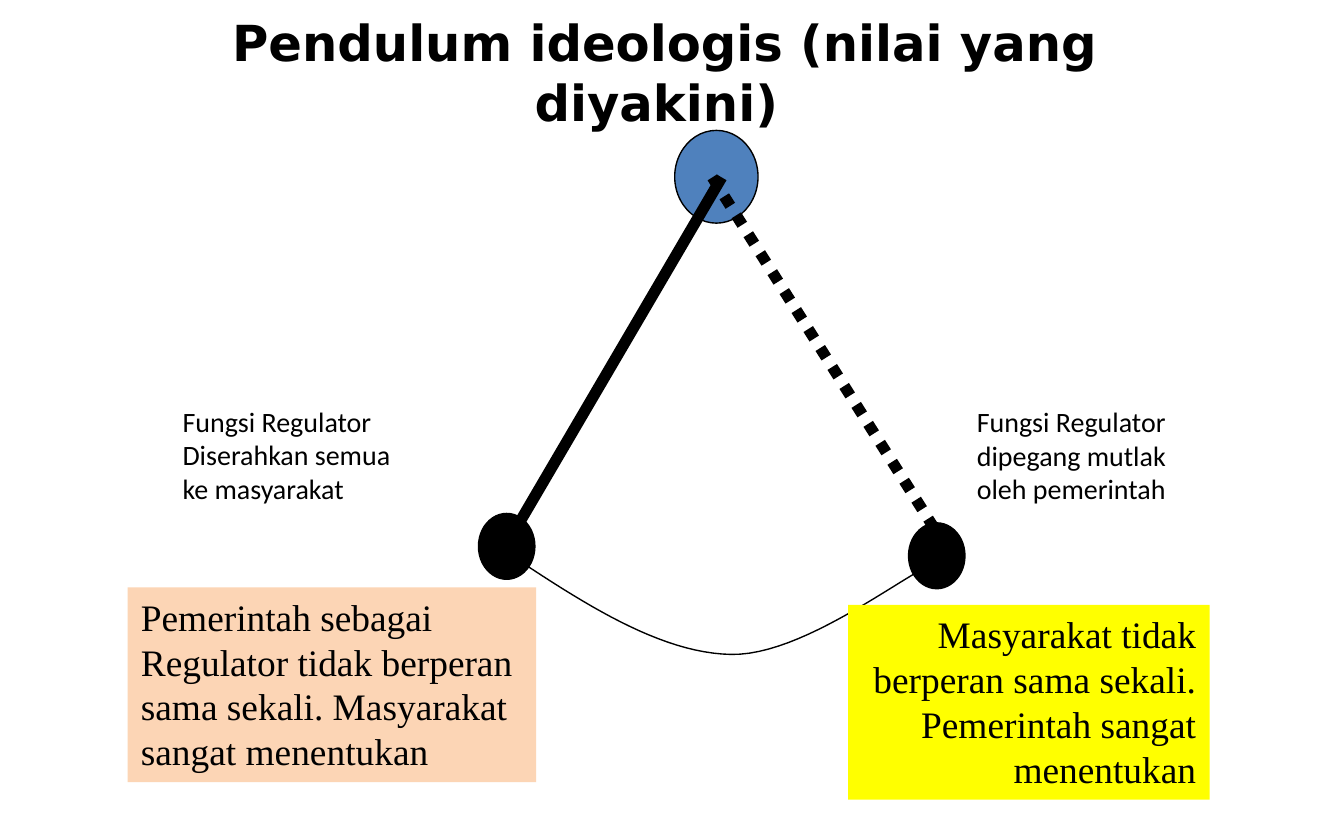
from dataclasses import dataclass

from lxml.etree import SubElement
from pptx import Presentation
from pptx.dml.color import RGBColor
from pptx.enum.dml import MSO_LINE
from pptx.enum.shapes import MSO_CONNECTOR, MSO_SHAPE
from pptx.enum.text import MSO_ANCHOR, PP_ALIGN
from pptx.oxml.ns import qn
from pptx.util import Inches, Pt

COLUMNS, ROWS = 100, 62.5
UNIT = Inches(10) / COLUMNS  # square grid cell


@dataclass(frozen=True)
class Theme:
    ink: RGBColor = RGBColor(0, 0, 0)
    pivot: RGBColor = RGBColor(0x4F, 0x81, 0xBD)
    peach: RGBColor = RGBColor(0xFC, 0xD5, 0xB5)
    yellow: RGBColor = RGBColor(0xFF, 0xFF, 0)
    title_font: str = "DejaVu Sans"
    label_font: str = "Calibri"
    note_font: str = "Times New Roman"
    title_size: float = 26.6
    label_size: float = 15
    note_size: float = 20
    thin: float = 0.75
    thick: float = 6


@dataclass(frozen=True)
class Box:
    """A region in grid columns and rows."""
    left: float
    top: float
    width: float
    height: float

    def inner(self, left, top, width, height):
        return Box(self.left + left, self.top + top, width, height)

    def point(self, x, y):
        return grid(self.left + x), grid(self.top + y)

    def lengths(self):
        return [grid(value) for value in (self.left, self.top, self.width, self.height)]


THEME = Theme()


def grid(value):
    return round(value * UNIT)


def write(shape, text, font, size, align=PP_ALIGN.LEFT, anchor=MSO_ANCHOR.TOP, bold=False):
    frame = shape.text_frame
    frame.word_wrap = True
    frame.vertical_anchor = anchor
    paragraph = frame.paragraphs[0]
    paragraph.text = text
    paragraph.alignment = align
    paragraph.font.name, paragraph.font.size = font, Pt(size)
    paragraph.font.bold, paragraph.font.color.rgb = bold, THEME.ink


def add_filled(slide, kind, box, fill, outlined=False):
    shape = slide.shapes.add_shape(kind, *box.lengths())
    shape.shadow.inherit = False
    shape.fill.solid()
    shape.fill.fore_color.rgb = fill
    if outlined:
        shape.line.color.rgb, shape.line.width = THEME.ink, Pt(THEME.thin)
    else:
        shape.line.fill.background()
    return shape


def add_rod(slide, start, end):
    rod = slide.shapes.add_connector(MSO_CONNECTOR.STRAIGHT, *start, *end)
    rod.line.color.rgb, rod.line.width = THEME.ink, Pt(THEME.thick)
    SubElement(rod._element.spPr, qn("a:effectLst"))
    return rod


def bezier(start, first, second, end, steps=24):
    for step in range(1, steps + 1):
        t = step / steps
        weights = ((1 - t) ** 3, 3 * t * (1 - t) ** 2, 3 * t * t * (1 - t), t ** 3)
        yield tuple(round(sum(weight * value for weight, value in zip(weights, axis)))
                    for axis in zip(start, first, second, end))


def add_swing(slide, box):
    left, dip, right = box.point(2.1, 31.4), box.point(18.8, 39), box.point(34.1, 32.1)
    points = [*bezier(left, box.point(7.8, 35.2), box.point(13.5, 38.9), dip),
              *bezier(dip, box.point(24.1, 39.1), box.point(31.5, 33.2), right)]
    builder = slide.shapes.build_freeform(*left)
    builder.add_line_segments(points, close=False)
    swing = builder.convert_to_shape()
    swing.shadow.inherit = False
    swing.fill.background()
    swing.line.color.rgb, swing.line.width = THEME.ink, Pt(THEME.thin)


def add_title(slide, box):
    title = slide.shapes.title
    title.left, title.top, title.width, title.height = box.lengths()
    frame = title.text_frame
    frame.margin_left = frame.margin_right = Inches(0.08)
    frame.margin_top = frame.margin_bottom = Inches(0.04)
    write(title, "Pendulum ideologis (nilai yang diyakini) ", THEME.title_font,
          THEME.title_size, PP_ALIGN.CENTER, MSO_ANCHOR.MIDDLE, bold=True)


def add_pendulum(slide, box):
    # Pivot and the current position of the rod
    add_filled(slide, MSO_SHAPE.OVAL, box.inner(14.6, 0, 6.2, 6.9), THEME.pivot, outlined=True)
    rod = add_rod(slide, box.point(18.1, 3.5), box.point(1.4, 32))
    SubElement(rod.line._get_or_add_ln(), qn("a:tailEnd"), type="triangle")
    # Bobs at both ends of the swing
    for left, top in ((0, 28.5), (32, 29.2)):
        add_filled(slide, MSO_SHAPE.OVAL, box.inner(left, top, 4.2, 4.9), THEME.ink, outlined=True)
    # Opposite position and the path between them
    opposite = add_rod(slide, box.point(17.4, 3.5), box.point(34.1, 29.9))
    opposite.line.dash_style = MSO_LINE.ROUND_DOT
    add_swing(slide, box)


def add_note(slide, box, text, fill, align):
    note = add_filled(slide, MSO_SHAPE.RECTANGLE, box, fill)
    write(note, text, THEME.note_font, THEME.note_size, align)


def add_label(slide, box, text):
    label = slide.shapes.add_textbox(*box.lengths())
    write(label, text, THEME.label_font, THEME.label_size)


def main():
    presentation = Presentation()
    presentation.slide_width, presentation.slide_height = grid(COLUMNS), grid(ROWS)
    slide = presentation.slides.add_slide(presentation.slide_layouts[5])

    add_title(slide, Box(8.3, 2.4, 82.4, 5.9))
    add_pendulum(slide, Box(35.6, 9.7, 36.2, 39.2))
    # What each extreme means
    add_note(slide, Box(9.5, 43.7, 30.4, 14.5),
             "Pemerintah sebagai Regulator tidak berperan sama sekali. "
             "Masyarakat sangat menentukan", THEME.peach, PP_ALIGN.LEFT)
    add_note(slide, Box(63.1, 45, 26.9, 14.5),
             "Masyarakat tidak berperan sama sekali. "
             "Pemerintah sangat menentukan", THEME.yellow, PP_ALIGN.RIGHT)
    # Who holds the regulator function
    add_label(slide, Box(71.7, 29.6, 17.6, 11.1),
              "Fungsi Regulator dipegang mutlak oleh pemerintah")
    add_label(slide, Box(12.6, 29.6, 19.5, 8.6),
              "Fungsi Regulator Diserahkan semua ke masyarakat")
    presentation.save("out.pptx")


if __name__ == "__main__":
    main()
